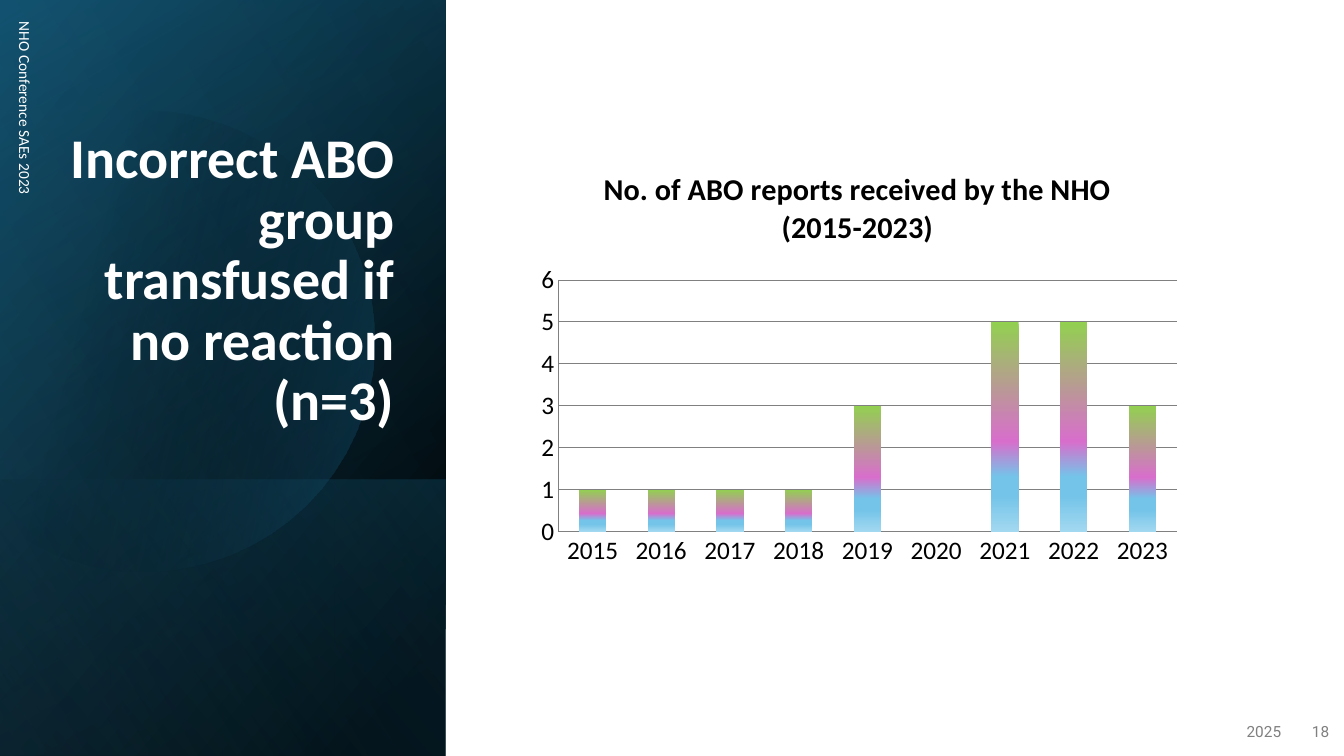
from lxml import etree
from pptx import Presentation
from pptx import util as u
from pptx.chart import data
from pptx.dml import color
from pptx.enum import chart as charts, shapes, text
from pptx.oxml import ns

Cm, Pt, RGB = u.Cm, u.Pt, color.RGBColor

WHITE = RGB(0xFF, 0xFF, 0xFF)
BLACK = RGB(0, 0, 0)
GREY = RGB(0x80, 0x80, 0x80)
NAVY = RGB(0x10, 0x48, 0x62)
TEAL = RGB(0x15, 0x60, 0x82)
SKY = RGB(0x46, 0xB1, 0xE1)
GREEN = RGB(0x92, 0xD0, 0x50)
PINK = RGB(0xD8, 0x6E, 0xCC)
BLUE = RGB(0x74, 0xC4, 0xE9)
PALE = RGB(0xA2, 0xD8, 0xF0)

WIDTH, HEIGHT = 33.87, 19.05
PANEL = (-3.91, 3.91, HEIGHT, 11.23)
PANEL_FOOT = (2.13, 9.96, 6.96, 11.23)

CIRCLE_START = (3.78, 2.79)
CIRCLE_CURVES = [
    [(6.25, 2.84), (8.51, 4.5), (9.22, 6.99)],
    [(10.11, 10.08), (8.33, 13.28), (5.26, 14.17)],
    [(3.33, 14.73), (1.35, 14.25), (-0.08, 13.06)],
    [(-0.38, 12.78)],
    [(-0.38, 4.45)],
    [(0, 4.09)],
    [(0.58, 3.61), (1.27, 3.25), (2.03, 3.02)],
    [(2.62, 2.87), (3.2, 2.79), (3.78, 2.79)],
]

REPORTS_TITLE = "No. of ABO reports received by the NHO (2015-2023)"
REPORTS = dict(zip(map(str, range(2015, 2024)), (1, 1, 1, 1, 3, 0, 5, 5, 3)))


def curve_points(start, curves, steps=16):
    points = [start]
    for curve in curves:
        if len(curve) == 1:
            points += curve
            continue
        corners = [points[-1]] + curve
        for step in range(1, steps + 1):
            t = step / steps
            weights = ((1 - t) ** 3, 3 * t * (1 - t) ** 2, 3 * t * t * (1 - t), t ** 3)
            points.append(tuple(sum(w * c[axis] for w, c in zip(weights, corners))
                                for axis in (0, 1)))
    return points


class Deck:
    font = "Calibri"

    def __init__(self):
        self.deck = Presentation()
        self.deck.slide_width, self.deck.slide_height = Cm(WIDTH), Cm(HEIGHT)
        self.slide = self.deck.slides.add_slide(self.deck.slide_layouts[6])

    def gradient(self, fill, element, stops, angle):
        fill.solid()
        fill.fore_color.rgb = BLACK
        solid = element.find(".//" + ns.qn("a:solidFill"))
        grad = etree.Element(ns.qn("a:gradFill"), rotWithShape="1")
        stop_list = etree.SubElement(grad, ns.qn("a:gsLst"))
        for position, rgb, opacity in stops:
            stop = etree.SubElement(stop_list, ns.qn("a:gs"), pos=str(position * 1000))
            tone = etree.SubElement(stop, ns.qn("a:srgbClr"), val=str(rgb))
            if opacity < 100:
                etree.SubElement(tone, ns.qn("a:alpha"), val=str(opacity * 1000))
        etree.SubElement(grad, ns.qn("a:lin"), ang=str(angle * 60000), scaled="0")
        solid.getparent().replace(solid, grad)

    def plain(self, shape):
        shape.shadow.inherit = False
        shape.line.fill.background()
        return shape

    def rect(self, box):
        return self.plain(self.slide.shapes.add_shape(
            shapes.MSO_SHAPE.RECTANGLE, *map(Cm, box)))

    def backdrop(self):
        page = self.rect((0, 0, WIDTH, HEIGHT))
        page.fill.solid()
        page.fill.fore_color.rgb = WHITE

    def panel(self, box, stops, angle):
        panel = self.rect(box)
        panel.rotation = 90
        panel._element.spPr.find(ns.qn("a:xfrm")).set("flipH", "1")
        self.gradient(panel.fill, panel._element, stops, angle)

    def outline(self, start, curves, stops, angle):
        points = [(round(x * 1000), round(y * 1000)) for x, y in curve_points(start, curves)]
        builder = self.slide.shapes.build_freeform(*points[0], scale=Cm(0.001))
        builder.add_line_segments(points[1:], close=True)
        outline = self.plain(builder.convert_to_shape())
        self.gradient(outline.fill, outline._element, stops, angle)

    def label(self, box, words, size=11, rgb=WHITE, font=None, bold=False, rotation=0,
              align=text.PP_ALIGN.RIGHT, anchor=text.MSO_ANCHOR.MIDDLE, after=6, spacing=1.0):
        label = self.slide.shapes.add_textbox(*map(Cm, box))
        label.rotation = rotation
        frame = label.text_frame
        frame.word_wrap = True
        frame.vertical_anchor = anchor
        frame.text = words
        paragraph = frame.paragraphs[0]
        paragraph.alignment = align
        paragraph.space_after = Pt(after)
        paragraph.line_spacing = spacing
        style = paragraph.runs[0].font
        style.name, style.size, style.bold = font or self.font, Pt(size), bold
        style.color.rgb = rgb

    def columns(self, box, title, values, stops):
        source = data.CategoryChartData()
        source.categories = list(values)
        source.add_series(title, list(values.values()))
        chart = self.slide.shapes.add_chart(
            charts.XL_CHART_TYPE.COLUMN_CLUSTERED, *map(Cm, box), source).chart
        chart.font.name, chart.font.size = self.font, Pt(18)
        chart.font.color.rgb = BLACK
        chart.has_legend = False
        chart.has_title = True
        chart.chart_title.text_frame.text = title
        heading = chart.chart_title.text_frame.paragraphs[0].runs[0].font
        heading.name, heading.size, heading.bold = self.font, Pt(21.6), True
        heading.color.rgb = BLACK
        for axis in (chart.category_axis, chart.value_axis):
            axis.major_tick_mark = axis.minor_tick_mark = charts.XL_TICK_MARK.NONE
            axis.format.line.color.rgb = GREY
        scale = chart.value_axis
        scale.minimum_scale, scale.maximum_scale, scale.major_unit = 0, 6, 1
        scale.has_major_gridlines = True
        scale.major_gridlines.format.line.color.rgb = GREY
        plot = chart.plots[0]
        plot.gap_width = 150
        plot.vary_by_categories = False
        series = plot.series[0]
        self.gradient(series.format.fill, series._element, stops, 90)
        self.place_plot(chart, x=0.05, y=0.31, w=0.93, h=0.59)

    def place_plot(self, chart, **fractions):
        area = chart._chartSpace.find(".//" + ns.qn("c:plotArea"))
        for old in area.findall(ns.qn("c:layout")):
            area.remove(old)
        layout = etree.Element(ns.qn("c:layout"))
        manual = etree.SubElement(layout, ns.qn("c:manualLayout"))
        settings = dict(layoutTarget="inner", xMode="edge", yMode="edge", **fractions)
        for key, value in settings.items():
            etree.SubElement(manual, ns.qn("c:" + key), val=str(value))
        area.insert(0, layout)


def main():
    deck = Deck()
    deck.backdrop()
    deck.panel(PANEL, [(8, BLACK, 100), (100, NAVY, 100)], 50)
    deck.panel(PANEL, [(0, BLACK, 0), (99, TEAL, 46)], 30)
    deck.panel(PANEL_FOOT, [(2, TEAL, 29), (100, BLACK, 30)], 130)
    deck.outline(CIRCLE_START, CIRCLE_CURVES, [(29, BLACK, 0), (100, TEAL, 43)], 14)
    deck.panel(PANEL, [(0, BLACK, 0), (99, SKY, 11)], 120)
    deck.label((1.3, 1.63, 8.89, 9.4), "Incorrect ABO group transfused if no reaction (n=3)",
               size=40, bold=True, anchor=text.MSO_ANCHOR.BOTTOM, after=0, spacing=0.9)
    deck.label((-5.08, 5.51, 11.43, 1.02), "NHO Conference SAEs 2023",
               rotation=90, align=text.PP_ALIGN.LEFT)
    deck.label((24.92, 17.93, 7.62, 1.02), "2025", rgb=GREY, font="Roboto")
    deck.label((32.51, 17.93, 1.24, 1.02), "18", rgb=GREY, font="Roboto")
    deck.columns((13.23, 3.73, 16.76, 10.74), REPORTS_TITLE, REPORTS,
                 [(0, GREEN, 100), (57, PINK, 100), (74, BLUE, 100),
                  (83, BLUE, 100), (100, PALE, 100)])
    deck.deck.save("out.pptx")


if __name__ == "__main__":
    main()
